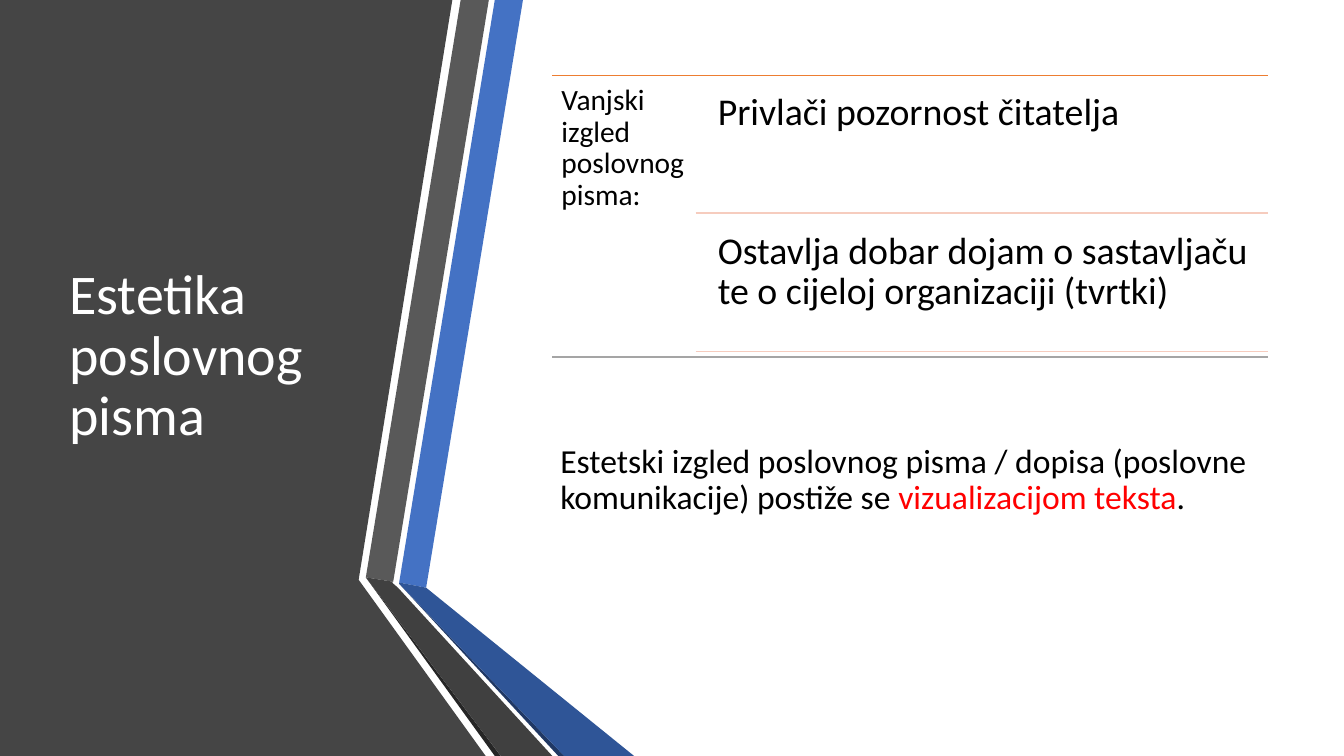
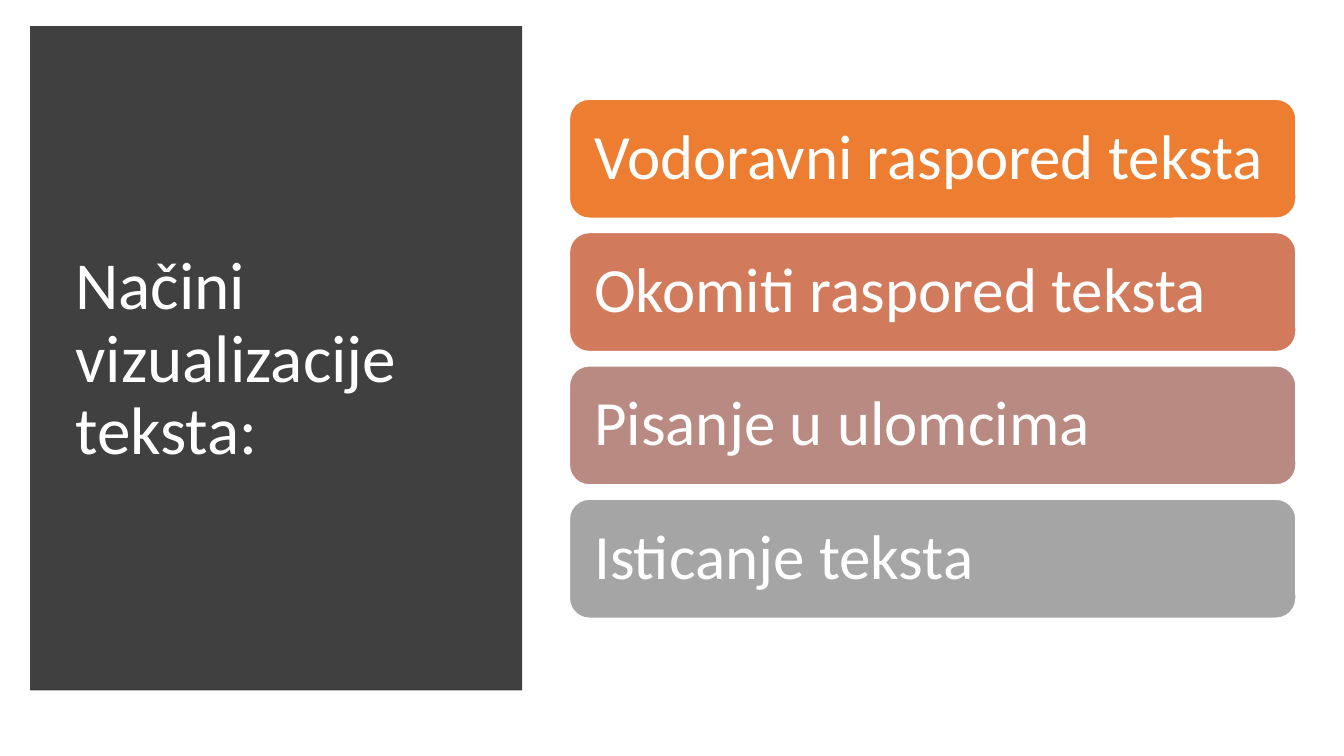
import pptx
import pptx.util
import pptx.dml.color
import pptx.enum.shapes
import pptx.enum.text
import lxml.etree

Cm, Pt = pptx.util.Cm, pptx.util.Pt
Anchor = pptx.enum.text.MSO_ANCHOR
Kind = pptx.enum.shapes.MSO_SHAPE

FONT = "Calibri"
WHITE, BLACK, RED = "FFFFFF", "000000", "FF0000"
DARK, ORANGE, PINK, GRAY = "404040", "ED7D31", "F6CCBE", "A5A5A5"
WIDE, HIGH = 33.87, 19.05

BANDS = [
    ("454545", [(0, 0), (11.4, 0), (9.04, 14.61), (12.24, HIGH), (0, HIGH)]),
    ("4472C4", [(10.06, 14.68), (10.74, 14.81), (13.18, 0), (12.47, 0)]),
    ("595959", [(12.32, 0), (11.61, 0), (9.22, 14.55), (9.91, 14.66)]),
    ("262626", [(9.22, 14.55), (12.47, HIGH), (12.62, HIGH)]),
    ("203864", [(10.06, 14.71), (14.07, HIGH), (14.22, HIGH)]),
    ("2F5597", [(10.06, 14.71), (14.22, HIGH), (15.98, HIGH),
                (10.74, 14.81), (10.06, 14.68)]),
    (DARK, [(13.92, HIGH), (10.03, 14.81), (9.88, 14.68), (9.91, 14.66),
            (9.22, 14.55), (12.62, HIGH)]),
]

LOOKS = {
    "title": "Estetika poslovnog pisma",
    "label": "Vanjski izgled poslovnog pisma:",
    "rows": ["Privlači pozornost čitatelja",
             "Ostavlja dobar dojam o sastavljaču te o cijeloj organizaciji (tvrtki)"],
    "close": [("Estetski izgled poslovnog pisma / dopisa (poslovne komunikacije) postiže se ", BLACK),
              ("vizualizacijom teksta", RED), (".", BLACK)],
}

WAYS = {
    "title": "Načini vizualizacije teksta:",
    "cards": [("Vodoravni raspored teksta", ORANGE),
              ("Okomiti raspored teksta", "D17B5C"),
              ("Pisanje u ulomcima", "B98A82"),
              ("Isticanje teksta", GRAY)],
}


def paint(form, color):
    form.rgb = pptx.dml.color.RGBColor.from_string(color)


def coat(shape, fill, line=None):
    shape.shadow.inherit = False
    shape.fill.solid()
    paint(shape.fill.fore_color, fill)
    if line:
        paint(shape.line.color, line)
        shape.line.width = Pt(1)
    else:
        shape.line.fill.background()


def write(shape, runs, size, color=BLACK, inset=(0.25, 0.13), anchor=Anchor.TOP):
    frame = shape.text_frame
    frame.word_wrap = True
    frame.vertical_anchor = anchor
    frame.margin_left = frame.margin_right = Cm(inset[0])
    frame.margin_top = frame.margin_bottom = Cm(inset[1])
    para = frame.paragraphs[0]
    para.alignment = pptx.enum.text.PP_ALIGN.LEFT
    para.line_spacing = 0.9
    para.font.name = FONT
    para.font.size = Pt(size)
    if isinstance(runs, str):
        runs = [(runs, color)]
    for words, tint in runs:
        run = para.add_run()
        run.text = words
        paint(run.font.color, tint)


def label(slide, box, runs, size, **style):
    write(slide.shapes.add_textbox(*map(Cm, box)), runs, size, **style)


def title(slide, box, words, size):
    label(slide, box, words, size, color=WHITE, anchor=Anchor.MIDDLE)


def band(slide, color, points):
    spots = [(Cm(x), Cm(y)) for x, y in points]
    maker = slide.shapes.build_freeform(*spots[0])
    maker.add_line_segments(spots[1:], close=True)
    coat(maker.convert_to_shape(), color)


def rule(slide, left, right, top, color):
    line = slide.shapes.add_connector(
        pptx.enum.shapes.MSO_CONNECTOR.STRAIGHT, Cm(left), Cm(top), Cm(right), Cm(top))
    paint(line.line.color, color)
    line.line.width = Pt(1)
    props = line._element.spPr
    lxml.etree.SubElement(props, pptx.oxml.ns.qn("a:effectLst"))


def draw_looks(slide):
    for color, points in BANDS:
        band(slide, color, points)
    title(slide, (1.5, 1.91, 7.72, 14.17), LOOKS["title"], 40)
    left, right, top, mid = 13.92, 31.95, 1.91, 9
    rule(slide, left, right, top, ORANGE)
    label(slide, (left, top, 3.61, 7.1), LOOKS["label"], 21, inset=(0.23, 0.23))
    for i, words in enumerate(LOOKS["rows"]):
        y = 2.07 + 3.48 * i
        label(slide, (17.81, y, 14.15, 3.3), words, 27, inset=(0.28, 0.28))
        rule(slide, 17.53, right, y + 3.3, PINK)
    rule(slide, left, right, mid, GRAY)
    label(slide, (left, 11, right - left, 5.08), LOOKS["close"], 24, inset=(0.2, 0.2))


def draw_ways(slide):
    panel = slide.shapes.add_shape(Kind.RECTANGLE, *map(Cm, (0.76, 0.66, 12.4, 16.74)))
    coat(panel, DARK)
    title(slide, (1.65, 1.78, 10.57, 14.6), WAYS["title"], 48)
    for i, (words, color) in enumerate(WAYS["cards"]):
        box = (14.35, 2.5 + 3.36 * i, 18.31, 3)
        card = slide.shapes.add_shape(Kind.ROUNDED_RECTANGLE, *map(Cm, box))
        coat(card, color, WHITE)
        write(card, words, 45, WHITE, (0.48, 0), Anchor.MIDDLE)


def main():
    deck = pptx.Presentation()
    deck.slide_width, deck.slide_height = Cm(WIDE), Cm(HIGH)
    for draw in (draw_looks, draw_ways):
        draw(deck.slides.add_slide(deck.slide_layouts[6]))
    deck.save("out.pptx")


if __name__ == "__main__":
    main()
